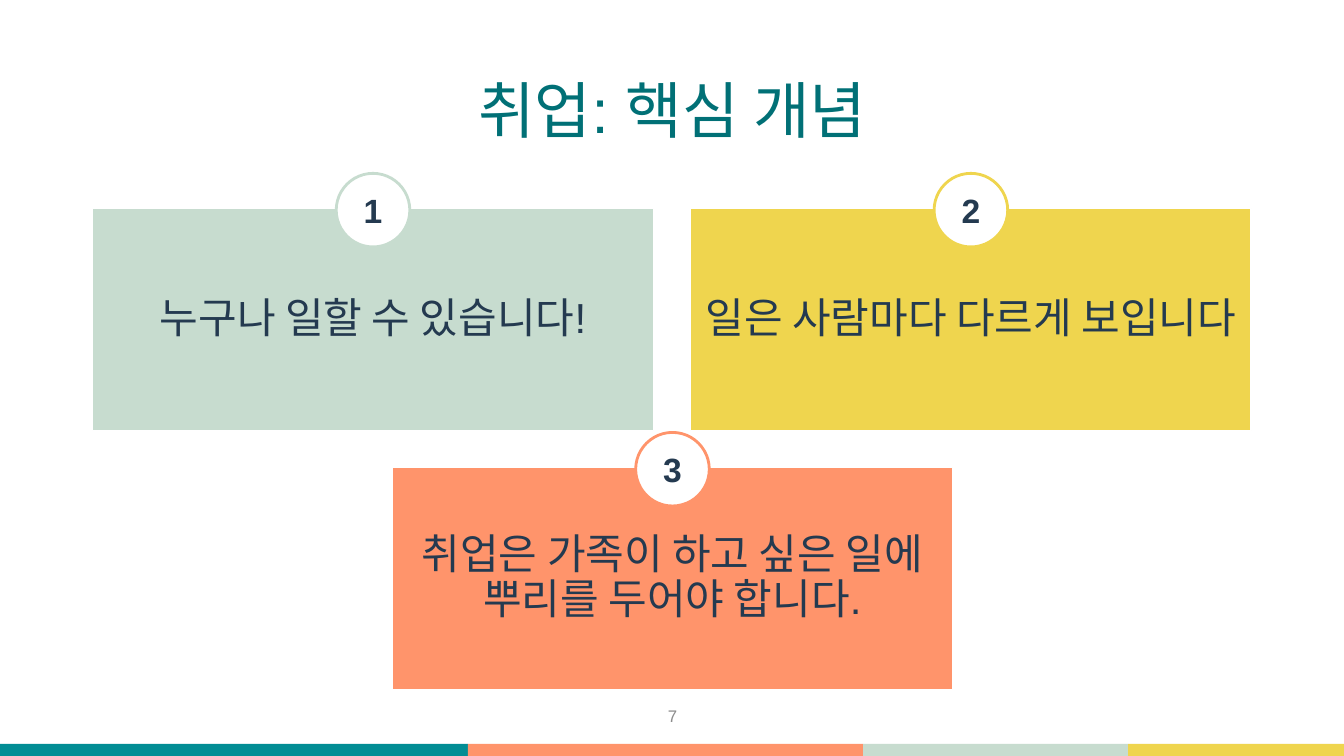
from pptx import Presentation
from pptx.dml.color import RGBColor as Rgb
from pptx.enum.shapes import MSO_SHAPE as Kind
from pptx.enum.text import MSO_ANCHOR as Anchor, PP_ALIGN as Align
from pptx.util import Inches, Pt

HUES = {
    "teal": "028D94", "deep": "017076", "mint": "C7DCCF", "gold": "EFD54E",
    "coral": "FF946B", "white": "FFFFFF", "navy": "243A50", "gray": "8C8C8C",
}


class Deck:
    font = "Arial"

    def __init__(self):
        self.prs = Presentation()
        self.prs.slide_width = Inches(13.33)
        self.prs.slide_height = Inches(7.5)
        self.slide = self.prs.slides.add_slide(self.prs.slide_layouts[5])

    def hue(self, name):
        return Rgb.from_string(HUES[name])

    def letter(self, shape, text, size, hue, inset=0, bold=False, lead=1, after=0):
        frame = shape.text_frame
        frame.word_wrap = True
        frame.vertical_anchor = Anchor.MIDDLE
        frame.margin_left = frame.margin_right = Inches(inset)
        frame.margin_top = frame.margin_bottom = Inches(inset)
        frame.text = text
        para = frame.paragraphs[0]
        para.alignment = Align.CENTER
        para.line_spacing = lead
        para.space_after = Pt(after)
        para.font.name = self.font
        para.font.size = Pt(size)
        para.font.bold = bold
        para.font.color.rgb = self.hue(hue)

    def title(self, text, box):
        shape = self.slide.shapes.title
        shape.left, shape.top, shape.width, shape.height = map(Inches, box)
        self.letter(shape, text, 44, "deep", 0.1, lead=0.9)

    def label(self, text, box, size, hue):
        shape = self.slide.shapes.add_textbox(*map(Inches, box))
        self.letter(shape, text, size, hue)

    def shape(self, kind, box, fill, line=None, width=1):
        shape = self.slide.shapes.add_shape(kind, *map(Inches, box))
        shape.shadow.inherit = False
        shape.fill.solid()
        shape.fill.fore_color.rgb = self.hue(fill)
        if line:
            shape.line.color.rgb = self.hue(line)
            shape.line.width = Pt(width)
        else:
            shape.line.fill.background()
        return shape

    def card(self, text, left, top, hue):
        box = (left, top, 5.56, 2.2)
        shape = self.shape(Kind.RECTANGLE, box, hue, "white")
        self.letter(shape, text, 30, "navy", 0.12, lead=0.9, after=10.5)

    def badge(self, text, left, top, hue):
        size = 0.73
        box = (left + (5.56 - size) / 2, top - 0.35, size, size)
        shape = self.shape(Kind.OVAL, box, "white", hue, 2)
        self.letter(shape, text, 24, "navy", bold=True)


def main():
    deck = Deck()
    stops = [0, 4.64, 8.56, 11.19, 13.33]
    for left, right, hue in zip(stops, stops[1:], ["teal", "coral", "mint", "gold"]):
        deck.shape(Kind.RECTANGLE, (left, 7.38, right - left, 0.14), hue)
    deck.label("7", (5.17, 6.9, 3, 0.4), 12, "gray")
    deck.title("취업: 핵심 개념", (0.92, 0.4, 11.5, 1.45))

    ideas = [
        ("누구나 일할 수 있습니다!", 0.92, 2.07, "mint"),
        ("일은 사람마다 다르게 보입니다", 6.85, 2.07, "gold"),
        ("취업은 가족이 하고 싶은 일에 뿌리를 두어야 합니다.", 3.89, 4.64, "coral"),
    ]
    for idea in ideas:
        deck.card(*idea)
    for num, (_, left, top, hue) in enumerate(ideas, 1):
        deck.badge(str(num), left, top, hue)
    deck.prs.save("out.pptx")


if __name__ == "__main__":
    main()
